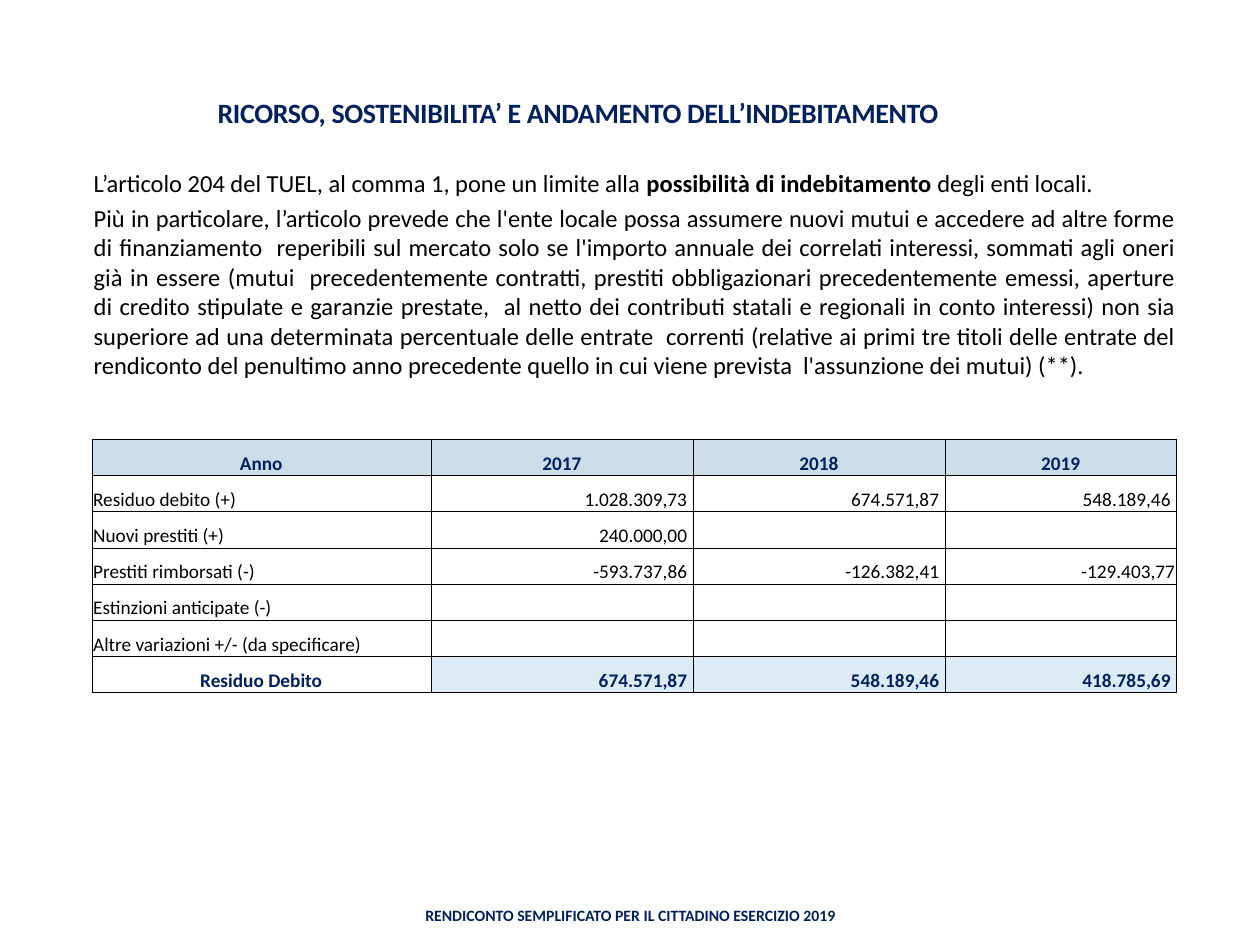
import pptx
import pptx.util
import pptx.dml.color
import pptx.enum.text
import pptx.oxml.ns
from lxml import etree

Pt = pptx.util.Pt
ALIGN = pptx.enum.text.PP_ALIGN
ANCHOR = pptx.enum.text.MSO_ANCHOR
qn = pptx.oxml.ns.qn

NAVY, BLACK = "002060", "000000"
HEAD_FILL, TOTAL_FILL = "CCDDEA", "DDEBF7"


def rgb(hex_color):
    return pptx.dml.color.RGBColor.from_string(hex_color)


class Deck:
    """Style and current slide."""
    font = "Calibri"

    def __init__(self, width, height):
        self.prs = pptx.Presentation()
        self.prs.slide_width, self.prs.slide_height = Pt(width), Pt(height)
        self.s = self.prs.slides.add_slide(self.prs.slide_layouts[6])

    def format_run(self, r, size, color, bold=False, spacing=0):
        r.font.name, r.font.size, r.font.bold = self.font, Pt(size), bold
        r.font.color.rgb = rgb(color)
        if spacing:
            r._r.get_or_add_rPr().set("spc", str(round(spacing * 100)))

    def text(self, box, paragraphs, size, color, align, anchor=ANCHOR.TOP,
             insets=(0, 0, 0, 0), bold=False, spacing=0, before=0):
        """Each paragraph is a list of pieces; a piece in a tuple is bold."""
        sp = self.s.shapes.add_textbox(*map(Pt, box))
        tf = sp.text_frame
        tf.word_wrap, tf.vertical_anchor = True, anchor
        (tf.margin_left, tf.margin_top,
         tf.margin_right, tf.margin_bottom) = map(Pt, insets)
        for i, pieces in enumerate(paragraphs):
            p = tf.add_paragraph() if i else tf.paragraphs[0]
            p.alignment, p.space_before = align, Pt(before)
            for piece in pieces:
                strong = isinstance(piece, tuple)
                r = p.add_run()
                r.text = piece[0] if strong else piece
                self.format_run(r, size, color, bold or strong, spacing)

    def borders(self, cell, color, width):
        tcPr = cell._tc.get_or_add_tcPr()
        for side in ("a:lnL", "a:lnR", "a:lnT", "a:lnB"):
            ln = etree.SubElement(tcPr, qn(side), w=str(Pt(width)))
            fill = etree.SubElement(ln, qn("a:solidFill"))
            etree.SubElement(fill, qn("a:srgbClr"), val=color)

    def cell(self, cell, text, size, color, align, bold, fill):
        cell.margin_left = cell.margin_top = Pt(0.6)
        cell.margin_right, cell.margin_bottom = Pt(1), 0
        cell.vertical_anchor = ANCHOR.BOTTOM
        p = cell.text_frame.paragraphs[0]
        p.text, p.alignment = text, align
        for r in p.runs:
            self.format_run(r, size, color, bold)
        if not text:  # keeps an empty cell from stretching its row
            etree.SubElement(p._p, qn("a:endParaRPr"), sz=str(size * 100))
        self.borders(cell, BLACK, 0.5)
        if fill:
            cell.fill.solid()
            cell.fill.fore_color.rgb = rgb(fill)
        else:
            cell.fill.background()

    def table(self, left, top, widths, row_height, rows, size):
        last = len(rows) - 1
        table = self.s.shapes.add_table(
            len(rows), len(widths), Pt(left), Pt(top),
            Pt(sum(widths)), Pt(row_height * len(rows))).table
        table.first_row = table.horz_banding = False
        for column, width in zip(table.columns, widths):
            column.width = Pt(width)
        for i, row in enumerate(rows):
            table.rows[i].height = Pt(row_height)
            strong = i in (0, last)
            for j, text in enumerate(row):
                if i == 0 or (i == last and j == 0):
                    align = ALIGN.CENTER
                else:
                    align = ALIGN.RIGHT if j else ALIGN.LEFT
                fill = HEAD_FILL if i == 0 else TOTAL_FILL if i == last and j else None
                self.cell(table.cell(i, j), text, size,
                          NAVY if strong else BLACK, align, strong, fill)


def main():
    deck = Deck(720, 540)

    # Title
    deck.text((84.2, 53.3, 491.8, 20.2),
              [["RICORSO, SOSTENIBILITA’ E ANDAMENTO DELL’INDEBITAMENTO"]],
              16, NAVY, ALIGN.CENTER, ANCHOR.BOTTOM, (0.7, 0.7, 0, 0),
              bold=True, spacing=-0.2)

    # Body
    deck.text((52.6, 74.2, 619.9, 144.7), [
        ["L’articolo 204 del TUEL, al comma 1, pone un limite alla ",
         ("possibilità di indebitamento ",), "degli enti locali."],
        ["Più in particolare, l’articolo prevede che l'ente locale possa assumere "
         "nuovi mutui e accedere ad altre forme di finanziamento  reperibili sul "
         "mercato solo se l'importo annuale dei correlati interessi, sommati agli "
         "oneri già in essere (mutui  precedentemente contratti, prestiti "
         "obbligazionari precedentemente emessi, aperture di credito stipulate e "
         "garanzie prestate,  al netto dei contributi statali e regionali in conto "
         "interessi) non sia superiore ad una determinata percentuale delle "
         "entrate  correnti (relative ai primi tre titoli delle entrate del "
         "rendiconto del penultimo anno precedente quello in cui viene prevista  "
         "l'assunzione dei mutui) (**)."],
    ], 14, BLACK, ALIGN.JUSTIFY, insets=(0.9, 22, 0.5, 0), before=3)

    # Debt table
    deck.table(52.6, 251.2, (193.8, 149.8, 144, 132.3), 20.66, [
        ("Anno", "2017", "2018", "2019"),
        ("Residuo debito (+)", "1.028.309,73 ", "674.571,87 ", "548.189,46 "),
        ("Nuovi prestiti (+)", "240.000,00 ", "", ""),
        ("Prestiti rimborsati (-)", "-593.737,86 ", "-126.382,41 ", "-129.403,77"),
        ("Estinzioni anticipate (-)", "", "", ""),
        ("Altre variazioni +/- (da specificare)", "", "", ""),
        ("Residuo Debito", "674.571,87 ", "548.189,46 ", "418.785,69 "),
    ], 11)

    # Footer
    deck.text((217.6, 508.7, 285.1, 28.8),
              [["RENDICONTO SEMPLIFICATO PER IL CITTADINO ESERCIZIO 2019"]],
              9, NAVY, ALIGN.CENTER, ANCHOR.MIDDLE, (7.2, 3.6, 7.2, 3.6), bold=True)

    deck.prs.save("out.pptx")


if __name__ == "__main__":
    main()
